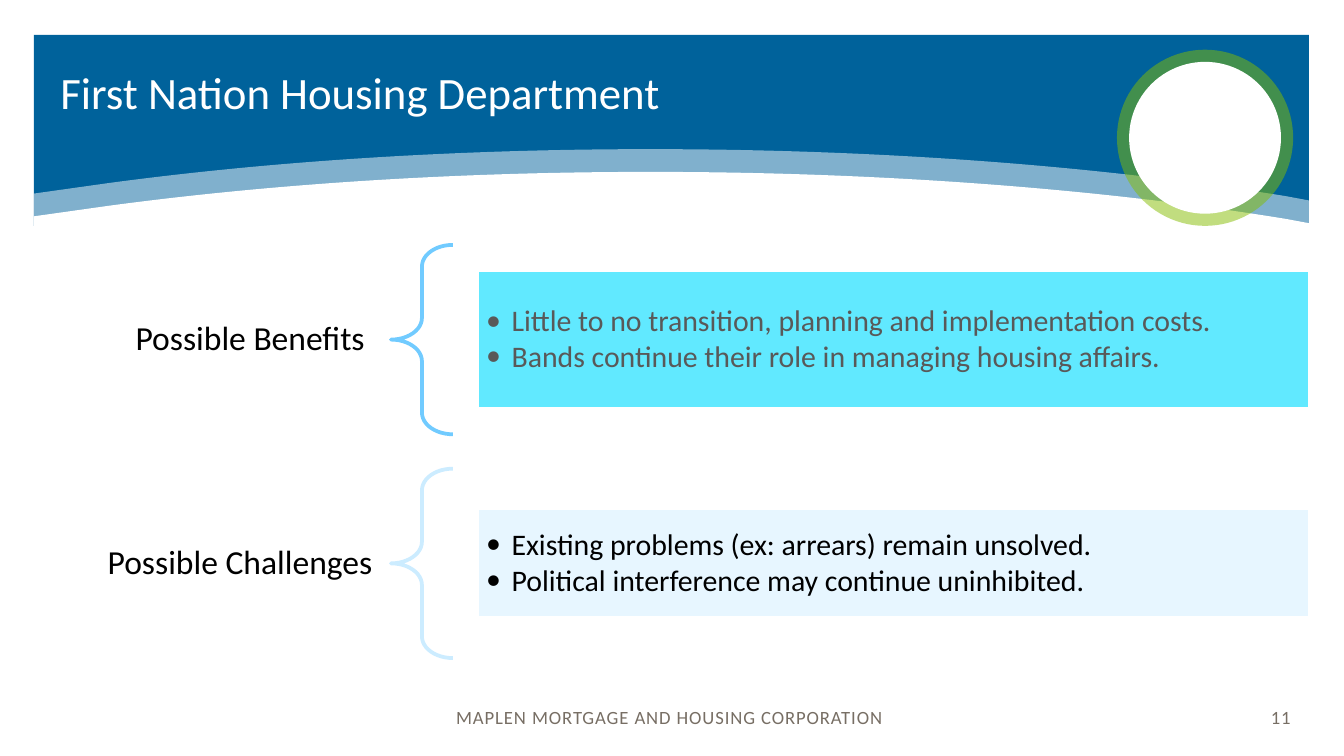
from lxml.etree import SubElement
from pptx import Presentation
from pptx.dml.color import RGBColor
from pptx.enum.shapes import MSO_SHAPE as Preset
from pptx.enum.text import MSO_ANCHOR as Anchor, PP_ALIGN as Align
from pptx.oxml.ns import qn
from pptx.util import Cm, Pt

COLORS = {
    "banner": "00629B", "white": "FFFFFF", "ring": "84BD00",
    "footer": "776E64", "black": "000000", "grey": "595959",
    "benefit_brace": "71CBFF", "benefit_box": "61E9FF",
    "challenge": "CCECFF",
}
FONT = "Calibri"
SLIDE_WIDTH, SLIDE_HEIGHT = 25.4, 14.29
BANNER_LEFT, BANNER_TOP, BANNER_WIDTH = 0.64, 0.66, 24.1
BANNER_RIGHT = BANNER_LEFT + BANNER_WIDTH
FOOTER_TOP, FOOTER_HEIGHT = 12.83, 1.46
ROW_HEIGHT = 3.58


def color(name):
    return RGBColor.from_string(COLORS[name])


def paint(shape, fill=None, opacity=100, line=None):
    """Set fill and outline, with opacity in percent."""
    shape.shadow.inherit = False
    if fill:
        shape.fill.solid()
        shape.fill.fore_color.rgb = color(fill)
        if opacity < 100:
            srgb = shape.fill._xPr.find(".//" + qn("a:srgbClr"))
            SubElement(srgb, qn("a:alpha")).set("val", str(opacity * 1000))
    else:
        shape.fill.background()
    if line:
        shape.line.color.rgb = color(line)
        shape.line.width = Pt(2)
    else:
        shape.line.fill.background()


def add_preset(slide, preset, left, top, width, height, **style):
    shape = slide.shapes.add_shape(
        preset, Cm(left), Cm(top), Cm(width), Cm(height))
    paint(shape, **style)
    return shape


def add_text_box(slide, left, top, width, height):
    return slide.shapes.add_textbox(Cm(left), Cm(top), Cm(width), Cm(height))


def write(shape, lines, size, font_color, align=Align.LEFT, insets=(0.25, 0.13),
          line_spacing=1.0, bullets=False, tracking=0):
    """Fill a shape with paragraphs; insets are horizontal and vertical in cm."""
    frame = shape.text_frame
    frame.word_wrap = True
    frame.vertical_anchor = Anchor.MIDDLE
    frame.margin_left = frame.margin_right = Cm(insets[0])
    frame.margin_top = frame.margin_bottom = Cm(insets[1])
    for index, line in enumerate(lines):
        paragraph = frame.add_paragraph() if index else frame.paragraphs[0]
        run = paragraph.add_run()
        run.text = line
        paragraph.alignment = align
        paragraph.line_spacing = line_spacing
        if tracking:
            run._r.get_or_add_rPr().set("spc", str(tracking))
        if bullets:
            paragraph.space_after = Pt(2)
            properties = paragraph._p.get_or_add_pPr()
            properties.set("marL", str(Cm(0.48)))
            properties.set("indent", str(-Cm(0.48)))
            SubElement(properties, qn("a:buFont")).set("typeface", FONT)
            SubElement(properties, qn("a:buChar")).set("char", "•")
        paragraph.font.name = FONT
        paragraph.font.size = Pt(size)
        paragraph.font.color.rgb = color(font_color)


def bend(shape, first):
    """Turn three line segments, from index first on, into one cubic curve."""
    segments = shape._element.findall(".//" + qn("a:lnTo"))[first:first + 3]
    curve = segments[0].makeelement(qn("a:cubicBezTo"))
    segments[0].addprevious(curve)
    for segment in segments:
        curve.append(segment[0])
        segment.getparent().remove(segment)


def add_arch(slide, top, opacity=100):
    """White area with an arched upper edge, cutting into the banner."""
    bottom = 4.56
    crest = (12.29, top)
    points = [(16.74, top), (20.88, top + 0.33), (24.31, top + 0.89),
              (BANNER_RIGHT, top + 0.97), (BANNER_RIGHT, bottom),
              (BANNER_LEFT, bottom), (BANNER_LEFT, top + 0.84),
              (2.06, top + 0.64),
              (5.11, top + 0.23), (8.59, top), crest]
    builder = slide.shapes.build_freeform(Cm(crest[0]), Cm(crest[1]))
    builder.add_line_segments([(Cm(x), Cm(y)) for x, y in points], close=True)
    arch = builder.convert_to_shape()
    bend(arch, 8)
    bend(arch, 0)
    paint(arch, "white", opacity)


def add_banner(slide):
    add_preset(slide, Preset.RECTANGLE, BANNER_LEFT, BANNER_TOP,
               BANNER_WIDTH, 3.61, fill="banner")
    add_arch(slide, 2.82, opacity=50)
    add_arch(slide, 3.25)
    left, top, diameter, inset = 21.11, 0.94, 3.33, 0.23
    add_preset(slide, Preset.OVAL, left, top, diameter, diameter,
               fill="ring", opacity=50)
    inner = diameter - 2 * inset
    add_preset(slide, Preset.OVAL, left + inset, top + inset, inner, inner,
               fill="white")
    title = add_text_box(slide, 0.89, BANNER_TOP, 19.96, 2.26)
    write(title, ["First Nation Housing Department"], 24, "white",
          line_spacing=Pt(26))


def add_footer(slide):
    footer = add_preset(slide, Preset.RECTANGLE, 0, FOOTER_TOP,
                        SLIDE_WIDTH, FOOTER_HEIGHT, fill="white")
    write(footer, ["MAPLEN MORTGAGE AND HOUSING CORPORATION "], 10, "footer",
          Align.CENTER, insets=(0, 0), tracking=50)
    number = add_text_box(slide, 23.22, FOOTER_TOP, 1.42, FOOTER_HEIGHT)
    write(number, ["11"], 10, "footer", Align.RIGHT, tracking=50)


def add_row(slide, top, label, lines, brace_color, box_color, opacity,
            box_height, text_color):
    """Label, brace and bulleted box, centred on one height."""
    label_box = add_text_box(slide, 1.6, top, 5.79, ROW_HEIGHT)
    write(label_box, [label], 18, "black", Align.RIGHT, insets=(0.35, 0.13),
          line_spacing=0.9)
    brace = add_preset(slide, Preset.LEFT_BRACE, 7.39, top, 1.17, ROW_HEIGHT,
                       line=brace_color)
    brace.adjustments[0] = 0.35
    box = add_preset(slide, Preset.RECTANGLE, 9.02,
                     top + (ROW_HEIGHT - box_height) / 2, 15.74, box_height,
                     fill=box_color, opacity=opacity, line="white")
    write(box, lines, 16, text_color, insets=(0.17, 0.17), line_spacing=0.9,
          bullets=True)


def main():
    presentation = Presentation()
    presentation.slide_width = Cm(SLIDE_WIDTH)
    presentation.slide_height = Cm(SLIDE_HEIGHT)
    slide = presentation.slides.add_slide(presentation.slide_layouts[6])
    add_banner(slide)
    add_row(slide, 4.63, "Possible Benefits ",
            ["Little to no transition, planning and implementation costs.",
             "Bands continue their role in managing housing affairs."],
            "benefit_brace", "benefit_box", 100, 2.62, "grey")
    add_row(slide, 8.86, "Possible Challenges ",
            ["Existing problems (ex: arrears) remain unsolved.",
             "Political interference may continue uninhibited."],
            "challenge", "challenge", 46, 2.08, "black")
    add_footer(slide)
    presentation.save("out.pptx")


if __name__ == "__main__":
    main()
